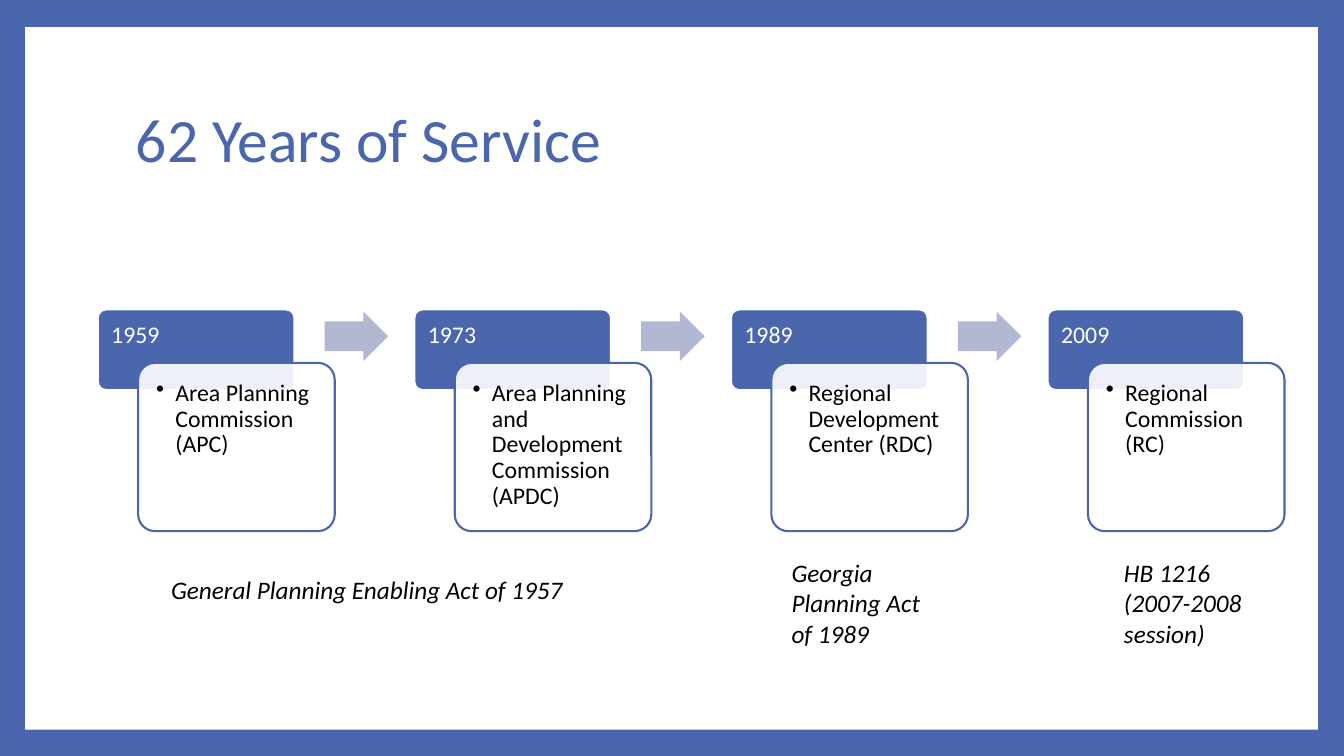
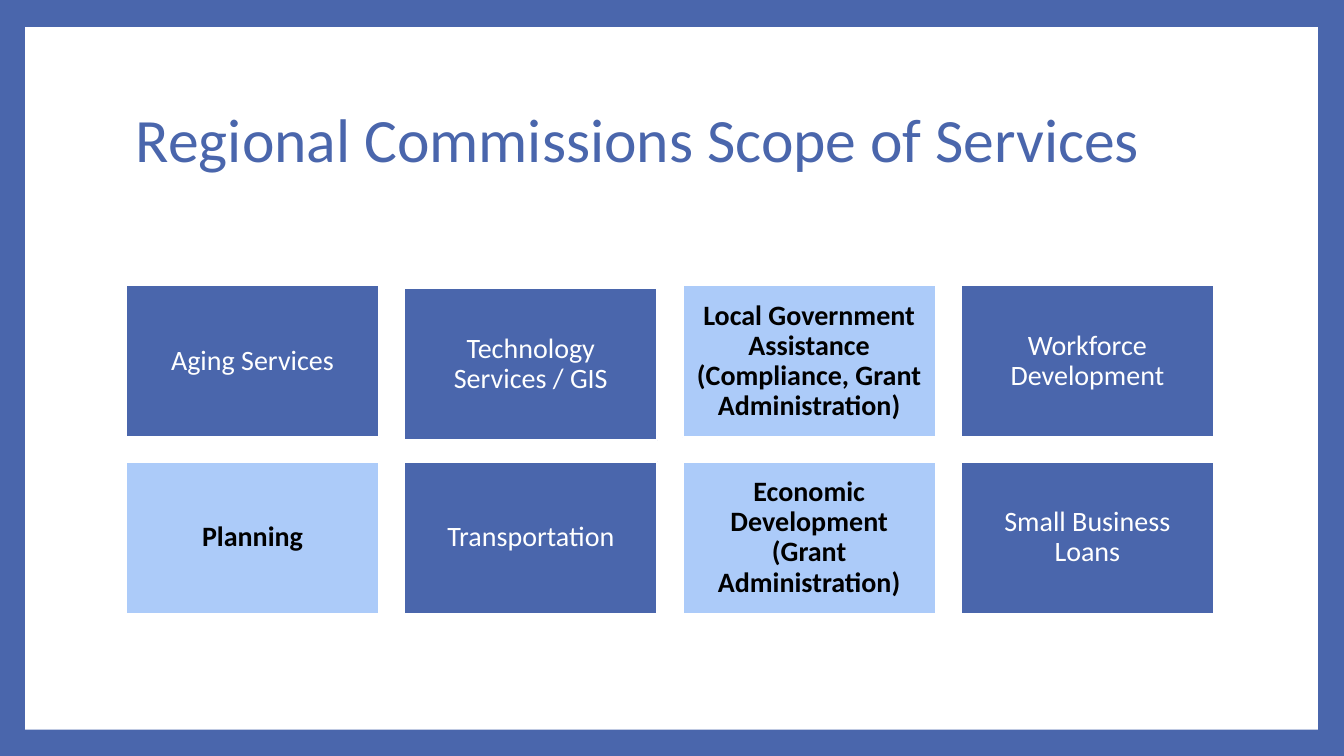
from dataclasses import dataclass
from typing import NamedTuple

from lxml import etree
from pptx import Presentation
from pptx import util as u
from pptx.dml.color import RGBColor
from pptx.enum import shapes, text
from pptx.oxml import ns


# Shared look
@dataclass(frozen=True)
class Theme:
    font: str = "Calibri"
    blue: str = "4A66AC"
    pale_blue: str = "ACCBF9"
    arrow: str = "B2B8D2"
    white: str = "FFFFFF"
    black: str = "000000"
    title_size: int = 44
    step_size: int = 17
    caption_size: int = 18
    service_size: int = 20
    outline: float = 1.5
    tight: float = 0.9


class Box(NamedTuple):
    left: float
    top: float
    width: float
    height: float

    def emu(self) -> list[u.Length]:
        return [u.Inches(length) for length in self]


@dataclass(frozen=True)
class Grid:
    left: float
    top: float
    column: float
    row: float

    def box(self, col: float, row: float, width: float, height: float) -> Box:
        return Box(self.left + col * self.column, self.top + row * self.row, width, height)


class Step(NamedTuple):
    year: str
    body: str


class Caption(NamedTuple):
    act: str
    col: float
    row: float
    width: float
    height: float


class Service(NamedTuple):
    label: str
    highlighted: bool = False
    drop: float = 0


THEME = Theme()
WIDTH, HEIGHT = 13.33, 7.5
PANEL = Box(0.25, 0.27, 12.82, 6.97)
TITLE = Box(1.25, 0.67, 10.8, 1.48)

TIMELINE = Grid(left=0.97, top=3.07, column=3.14, row=0.53)
SERVICE_GRID = Grid(left=1.25, top=2.83, column=2.76, row=1.75)

STEPS = [
    Step("1959", "Area Planning Commission (APC)"),
    Step("1973", "Area Planning and Development Commission (APDC)"),
    Step("1989", "Regional Development Center (RDC)"),
    Step("2009", "Regional Commission (RC)"),
]
CAPTIONS = [
    Caption("General Planning Enabling Act of 1957", 0.2, 4.87, 4.31, 0.4),
    Caption("Georgia Planning Act of 1989", 2.16, 4.55, 1.68, 1.01),
    Caption("HB 1216 (2007-2008 session)", 3.21, 4.55, 1.42, 1.01),
]
SERVICES = [
    [
        Service("Aging Services"),
        Service("Technology Services / GIS", drop=0.03),
        Service("Local Government Assistance (Compliance, Grant Administration)", True),
        Service("Workforce Development"),
    ],
    [
        Service("Planning", True),
        Service("Transportation"),
        Service("Economic Development (Grant Administration)", True),
        Service("Small Business Loans"),
    ],
]


# Drawing helpers
def write(shape, words: str, *, size: int, color: str = THEME.black, bold: bool = False,
          italic: bool = False, align=text.PP_ALIGN.LEFT, anchor=text.MSO_ANCHOR.TOP,
          spacing: float = 1.0, inset: tuple[float, float] = (0.1, 0.05),
          bullet_indent: float = 0) -> None:
    frame = shape.text_frame
    frame.word_wrap = True
    frame.vertical_anchor = anchor
    frame.margin_left = frame.margin_right = u.Inches(inset[0])
    frame.margin_top = frame.margin_bottom = u.Inches(inset[1])
    paragraph = frame.paragraphs[0]
    paragraph.alignment = align
    paragraph.line_spacing = spacing
    if bullet_indent:
        properties = paragraph._p.get_or_add_pPr()
        properties.set("marL", str(u.Inches(bullet_indent)))
        properties.set("indent", str(-u.Inches(bullet_indent)))
        etree.SubElement(properties, ns.qn("a:buChar"), char="•")
    run = paragraph.add_run()
    run.text = words
    run.font.name = THEME.font
    run.font.size = u.Pt(size)
    run.font.color.rgb = RGBColor.from_string(color)
    run.font.bold = bold
    run.font.italic = italic


def add_block(slide, kind, box: Box, fill: str, *, outline: str | None = None,
              adjust: tuple[float, ...] = (), opacity: int = 100):
    block = slide.shapes.add_shape(kind, *box.emu())
    block.shadow.inherit = False
    block.fill.solid()
    block.fill.fore_color.rgb = RGBColor.from_string(fill)
    if opacity < 100:
        tint = block._element.spPr.find(f".//{ns.qn('a:srgbClr')}")
        etree.SubElement(tint, ns.qn("a:alpha"), val=str(opacity * 1000))
    if outline:
        block.line.color.rgb = RGBColor.from_string(outline)
        block.line.width = u.Pt(THEME.outline)
    else:
        block.line.fill.background()
    for index, value in enumerate(adjust):
        block.adjustments[index] = value
    return block


def add_framed_slide(prs, heading: str):
    slide = prs.slides.add_slide(prs.slide_layouts[6])
    slide.background.fill.solid()
    slide.background.fill.fore_color.rgb = RGBColor.from_string(THEME.blue)
    add_block(slide, shapes.MSO_SHAPE.RECTANGLE, PANEL, THEME.white)
    write(slide.shapes.add_textbox(*TITLE.emu()), heading, size=THEME.title_size,
          color=THEME.blue, anchor=text.MSO_ANCHOR.MIDDLE, spacing=THEME.tight)
    return slide


# Timeline parts
def add_step(slide, col: int, step: Step) -> None:
    rounded = shapes.MSO_SHAPE.ROUNDED_RECTANGLE
    year = add_block(slide, rounded, TIMELINE.box(col, 0, 1.95, 0.8), THEME.blue,
                     outline=THEME.white, adjust=(0.1,))
    write(year, step.year, size=THEME.step_size, color=THEME.white,
          spacing=THEME.tight, inset=(0.11, 0.11))
    card_box = TIMELINE.box(col, 1, 1.95, 1.67)
    card = add_block(slide, rounded, card_box._replace(left=card_box.left + 0.4), THEME.white,
                     outline=THEME.blue, adjust=(0.1,), opacity=90)
    write(card, step.body, size=THEME.step_size, spacing=THEME.tight,
          inset=(0.13, 0.13), bullet_indent=0.19)
    if col < len(STEPS) - 1:
        arrow_box = TIMELINE.box(col, 0.04, 0.63, 0.49)
        add_block(slide, shapes.MSO_SHAPE.RIGHT_ARROW,
                  arrow_box._replace(left=arrow_box.left + 2.25), THEME.arrow, adjust=(0.6, 0.5))


def add_caption(slide, caption: Caption) -> None:
    place = TIMELINE.box(caption.col, caption.row, caption.width, caption.height)
    write(slide.shapes.add_textbox(*place.emu()), caption.act,
          size=THEME.caption_size, italic=True)


# Service tiles
def add_service(slide, col: int, row: int, service: Service) -> None:
    place = SERVICE_GRID.box(col, row, 2.51, 1.51)
    fill, ink = (THEME.pale_blue, THEME.black) if service.highlighted else (THEME.blue, THEME.white)
    tile = add_block(slide, shapes.MSO_SHAPE.RECTANGLE,
                     place._replace(top=place.top + service.drop), fill, outline=THEME.white)
    write(tile, service.label, size=THEME.service_size, color=ink, bold=service.highlighted,
          align=text.PP_ALIGN.CENTER, anchor=text.MSO_ANCHOR.MIDDLE,
          spacing=THEME.tight, inset=(0.08, 0.08))


def main() -> None:
    prs = Presentation()
    prs.slide_width, prs.slide_height = u.Inches(WIDTH), u.Inches(HEIGHT)

    history = add_framed_slide(prs, "62 Years of Service")
    for col, step in enumerate(STEPS):
        add_step(history, col, step)
    for caption in CAPTIONS:
        add_caption(history, caption)

    scope = add_framed_slide(prs, "Regional Commissions Scope of Services")
    for row, services in enumerate(SERVICES):
        for col, service in enumerate(services):
            add_service(scope, col, row, service)

    prs.save("out.pptx")


if __name__ == "__main__":
    main()
